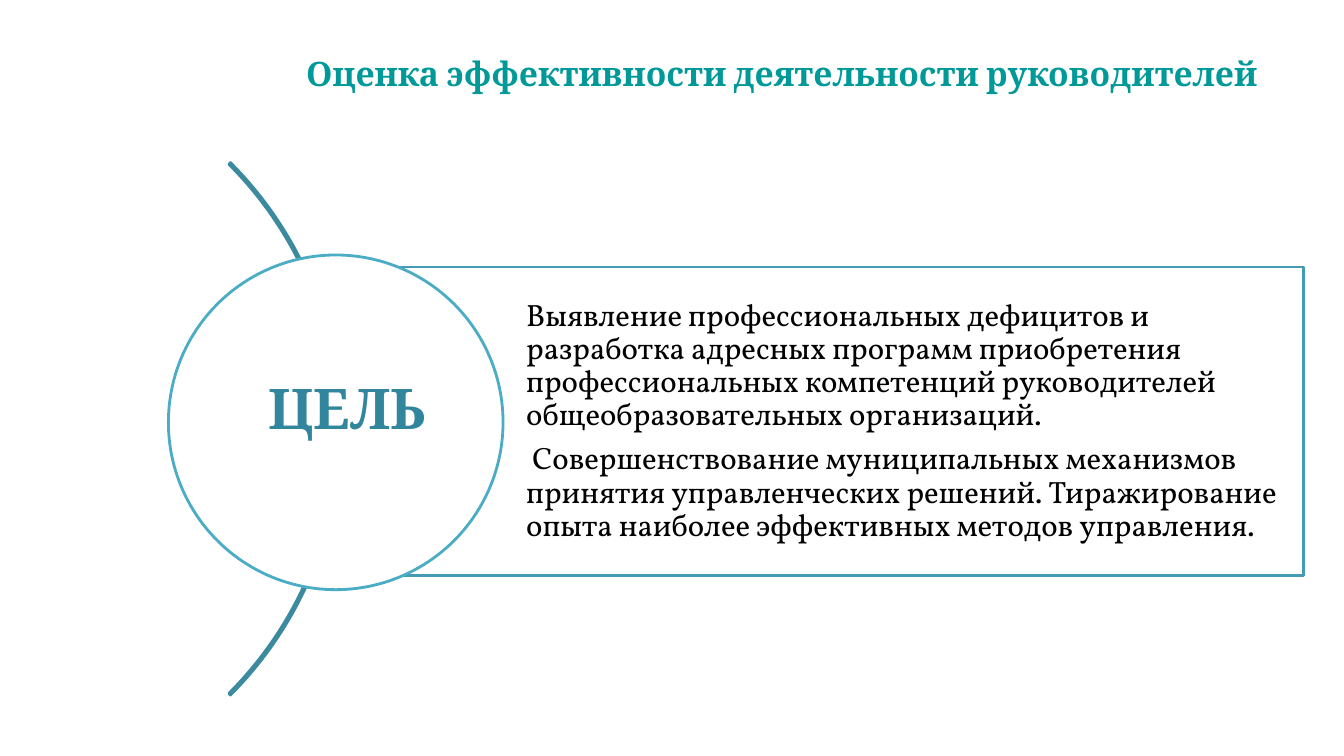
from dataclasses import dataclass

import pptx
import pptx.dml.color
import pptx.enum.shapes
import pptx.enum.text
import pptx.shapes.autoshape
import pptx.slide
import pptx.util

SHAPE = pptx.enum.shapes.MSO_SHAPE
ALIGN = pptx.enum.text.PP_ALIGN
ANCHOR = pptx.enum.text.MSO_ANCHOR

WIDTH, HEIGHT = pptx.util.Inches(13.33), pptx.util.Inches(7.5)
COLOURS = {
    "title": "009999",
    "arc": "3C8A9F",
    "panel": "449CB4",
    "circle": "4BACC6",
    "goal": "31859C",
    "body": "000000",
    "paper": "FFFFFF",
}


@dataclass(frozen=True)
class Area:
    """Position and size in percent of the slide's width and height."""
    left: float
    top: float
    width: float
    height: float

    def lengths(self) -> tuple[int, int, int, int]:
        return (
            int(WIDTH * self.left / 100),
            int(HEIGHT * self.top / 100),
            int(WIDTH * self.width / 100),
            int(HEIGHT * self.height / 100),
        )


@dataclass(frozen=True)
class Outline:
    kind: SHAPE
    area: Area
    colour: str
    filled: bool = True
    adjustments: tuple[float, ...] = ()


@dataclass(frozen=True)
class Wording:
    paragraphs: tuple[str, ...]
    font: str
    size: float
    colour: str
    insets: tuple[float, float, float, float]  # left, top, right, bottom in inches
    bold: bool = False
    align: ALIGN = ALIGN.CENTER
    anchor: ANCHOR = ANCHOR.MIDDLE
    line_spacing: float = 1.0
    gap: float = 0  # share of the text size left after each paragraph


TITLE_AREA = Area(19.65, 2.8, 77.03, 13.6)
GOAL_AREA = Area(16.05, 39.6, 19.58, 21.07)

ARC = Outline(SHAPE.BLOCK_ARC, Area(-30.68, 6.93, 56.03, 99.6), "arc",
              filled=False, adjustments=(189, 27, 0.003))
PANEL = Outline(SHAPE.RECTANGLE, Area(22.65, 35.33, 74.33, 40.8), "panel")
CIRCLE = Outline(SHAPE.OVAL, Area(12.53, 33.73, 24.9, 44.27), "circle")

TITLE = Wording(("Оценка эффективности деятельности руководителей",),
                "Cambria", 24, "title", (0.1, 0.05, 0.1, 0.05), bold=True)
GOAL = Wording(("ЦЕЛЬ",), "Cambria", 40, "goal", (0.1, 0.8, 0.1, 0),
               bold=True, anchor=ANCHOR.TOP)
AIMS = Wording(
    (
        "Выявление профессиональных дефицитов и разработка адресных программ "
        "приобретения профессиональных компетенций руководителей "
        "общеобразовательных организаций.",
        " Совершенствование муниципальных механизмов принятия управленческих "
        "решений. Тиражирование опыта наиболее эффективных методов управления.",
    ),
    "Vollkorn", 22, "body", (2.2, 0.06, 0.06, 0.06),
    align=ALIGN.LEFT, line_spacing=0.9, gap=0.35,
)


def rgb(name: str) -> pptx.dml.color.RGBColor:
    return pptx.dml.color.RGBColor.from_string(COLOURS[name])


def draw_outline(page: pptx.slide.Slide, outline: Outline) -> pptx.shapes.autoshape.Shape:
    shape = page.shapes.add_shape(outline.kind, *outline.area.lengths())
    shape.shadow.inherit = False
    for index, value in enumerate(outline.adjustments):
        shape.adjustments[index] = value
    if outline.filled:
        shape.fill.solid()
        shape.fill.fore_color.rgb = rgb("paper")
    else:
        shape.fill.background()
    shape.line.color.rgb = rgb(outline.colour)
    shape.line.width = pptx.util.Pt(2)
    return shape


def write(box: pptx.shapes.autoshape.Shape, wording: Wording) -> None:
    frame = box.text_frame
    frame.word_wrap = True
    frame.vertical_anchor = wording.anchor
    (frame.margin_left, frame.margin_top,
     frame.margin_right, frame.margin_bottom) = map(pptx.util.Inches, wording.insets)
    frame.text = "\n".join(wording.paragraphs)
    for para in frame.paragraphs:
        para.alignment = wording.align
        para.line_spacing = wording.line_spacing
        para.space_after = pptx.util.Pt(wording.size * wording.gap)
        para.font.name = wording.font
        para.font.size = pptx.util.Pt(wording.size)
        para.font.bold = wording.bold
        para.font.color.rgb = rgb(wording.colour)


def main() -> None:
    deck = pptx.Presentation()
    deck.slide_width, deck.slide_height = WIDTH, HEIGHT
    page = deck.slides.add_slide(deck.slide_layouts[6])

    write(page.shapes.add_textbox(*TITLE_AREA.lengths()), TITLE)
    draw_outline(page, ARC)
    write(draw_outline(page, PANEL), AIMS)
    draw_outline(page, CIRCLE)
    write(page.shapes.add_textbox(*GOAL_AREA.lengths()), GOAL)

    deck.save("out.pptx")


if __name__ == "__main__":
    main()
